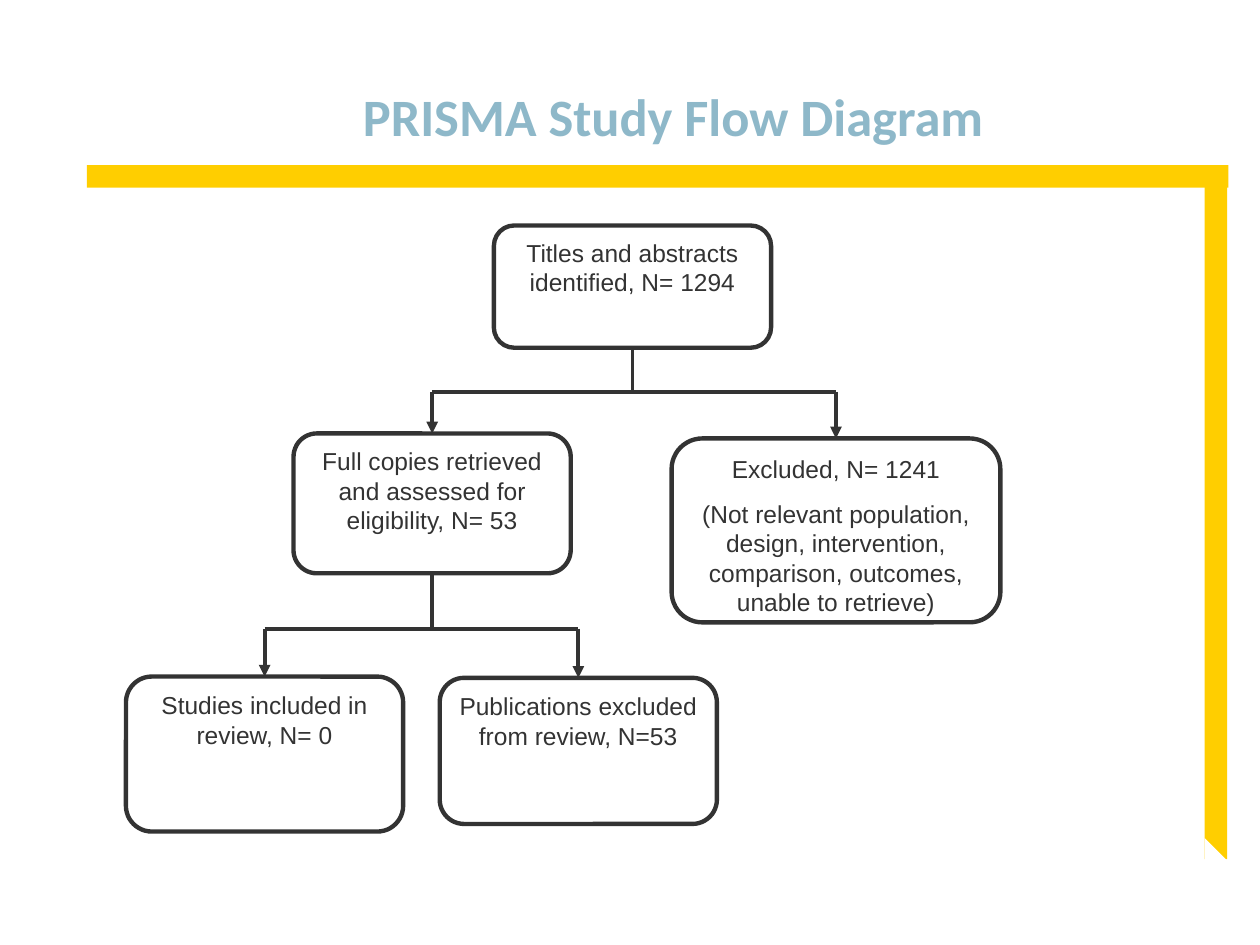
from dataclasses import dataclass

from lxml import etree
from pptx import Presentation
from pptx import util as u
from pptx.dml.color import RGBColor
from pptx.enum import shapes, text
from pptx.oxml.ns import qn


@dataclass
class Theme:
    ink = RGBColor(0x33, 0x33, 0x33)
    paper = RGBColor(0xFF, 0xFF, 0xFF)
    band = RGBColor(0xFF, 0xCE, 0x00)
    heading = RGBColor(0x8E, 0xB8, 0xC9)
    heading_font, heading_size = "Calibri", u.Pt(30)
    body_font, body_size = "Arial", u.Pt(14)
    box_line, flow_line = u.Pt(2.5), u.Pt(2.25)


theme = Theme()
Kind = shapes.MSO_SHAPE

prs = Presentation()
prs.slide_width, prs.slide_height = u.Inches(10), u.Inches(7.5)
slide = prs.slides.add_slide(prs.slide_layouts[5])


def add_block(kind, box, fill):
    block = slide.shapes.add_shape(kind, *map(u.Inches, box))
    block.shadow.inherit = False
    block.fill.solid()
    block.fill.fore_color.rgb = fill
    block.line.fill.background()
    return block


def add_flow(start, end, source=None, target=None):
    """Draw a line; join it to the source's bottom, and point it at the target's top."""
    flow = slide.shapes.add_connector(shapes.MSO_CONNECTOR.STRAIGHT, *map(u.Inches, start + end))
    flow.line.color.rgb = theme.ink
    flow.line.width = theme.flow_line
    properties = flow._element.spPr
    etree.SubElement(properties, qn("a:effectLst"))
    if source is not None:
        flow.begin_connect(source, 2)
    if target is not None:
        flow.end_connect(target, 0)
        etree.SubElement(properties.find(qn("a:ln")), qn("a:tailEnd"), type="triangle")


# Yellow band with a slanted lower end
add_block(Kind.RECTANGLE, (0.69, 1.31, 9.06, 0.18), theme.band)
add_block(Kind.RECTANGLE, (9.56, 1.31, 0.18, 5.51), theme.band)
slant = add_block(Kind.ISOSCELES_TRIANGLE, (9.56, 6.65, 0.18, 0.18), theme.paper)
slant.adjustments[0] = 0

# Title
title = slide.shapes.title
title.left, title.top, title.width, title.height = map(u.Inches, (2.52, 0.18, 7.23, 1.04))
title.text_frame.text = "PRISMA Study Flow Diagram"
title.text_frame.vertical_anchor = text.MSO_ANCHOR.BOTTOM
heading = title.text_frame.paragraphs[0]
heading.alignment = text.PP_ALIGN.LEFT
heading.line_spacing = 0.9
heading._p.get_or_add_pPr().set("marL", str(u.Inches(0.26)))
heading.font.name, heading.font.size = theme.heading_font, theme.heading_size
heading.font.bold = True
heading.font.color.rgb = theme.heading

# Study stages
stages = {
    "identified": ((3.92, 1.79, 2.2, 0.97), ["Titles and abstracts identified, N= 1294"]),
    "assessed": ((2.33, 3.44, 2.2, 1.11),
                 ["Full copies retrieved and assessed for eligibility, N= 53"]),
    "irrelevant": ((5.33, 3.48, 2.61, 1.46),
                   ["Excluded, N= 1241",
                    "(Not relevant population, design, intervention, "
                    "comparison, outcomes, unable to retrieve)"]),
    "included": ((1, 5.37, 2.2, 1.23), ["Studies included in review, N= 0"]),
    "excluded": ((3.49, 5.38, 2.2, 1.16), ["Publications excluded from review, N=53"]),
}
boxes = {}
for stage, (place, lines) in stages.items():
    box = boxes[stage] = add_block(Kind.ROUNDED_RECTANGLE, place, theme.paper)
    box.line.color.rgb = theme.ink
    box.line.width = theme.box_line
    frame = box.text_frame
    frame.word_wrap = True
    frame.vertical_anchor = text.MSO_ANCHOR.TOP
    frame.text = "\n".join(lines)
    for index, paragraph in enumerate(frame.paragraphs):
        paragraph.alignment = text.PP_ALIGN.CENTER
        paragraph.space_before = u.Pt(9 if index else 0)
        paragraph.font.name, paragraph.font.size = theme.body_font, theme.body_size
        paragraph.font.color.rgb = theme.ink

# Branches: a stem down to a crossbar, then an arrow to each outcome
branches = [
    ("identified", 3.11, ("assessed", "irrelevant")),
    ("assessed", 4.99, ("included", "excluded")),
]
for parent, bar_y, outcomes in branches:
    centres = {}
    for stage in (parent, *outcomes):
        left, top, width, height = stages[stage][0]
        centres[stage] = left + width / 2
    stem_x = centres[parent]
    add_flow((stem_x, bar_y), (stem_x, bar_y), source=boxes[parent])
    add_flow((centres[outcomes[0]], bar_y), (centres[outcomes[1]], bar_y))
    for outcome in outcomes:
        add_flow((centres[outcome], bar_y), (centres[outcome], bar_y), target=boxes[outcome])

prs.save("out.pptx")
